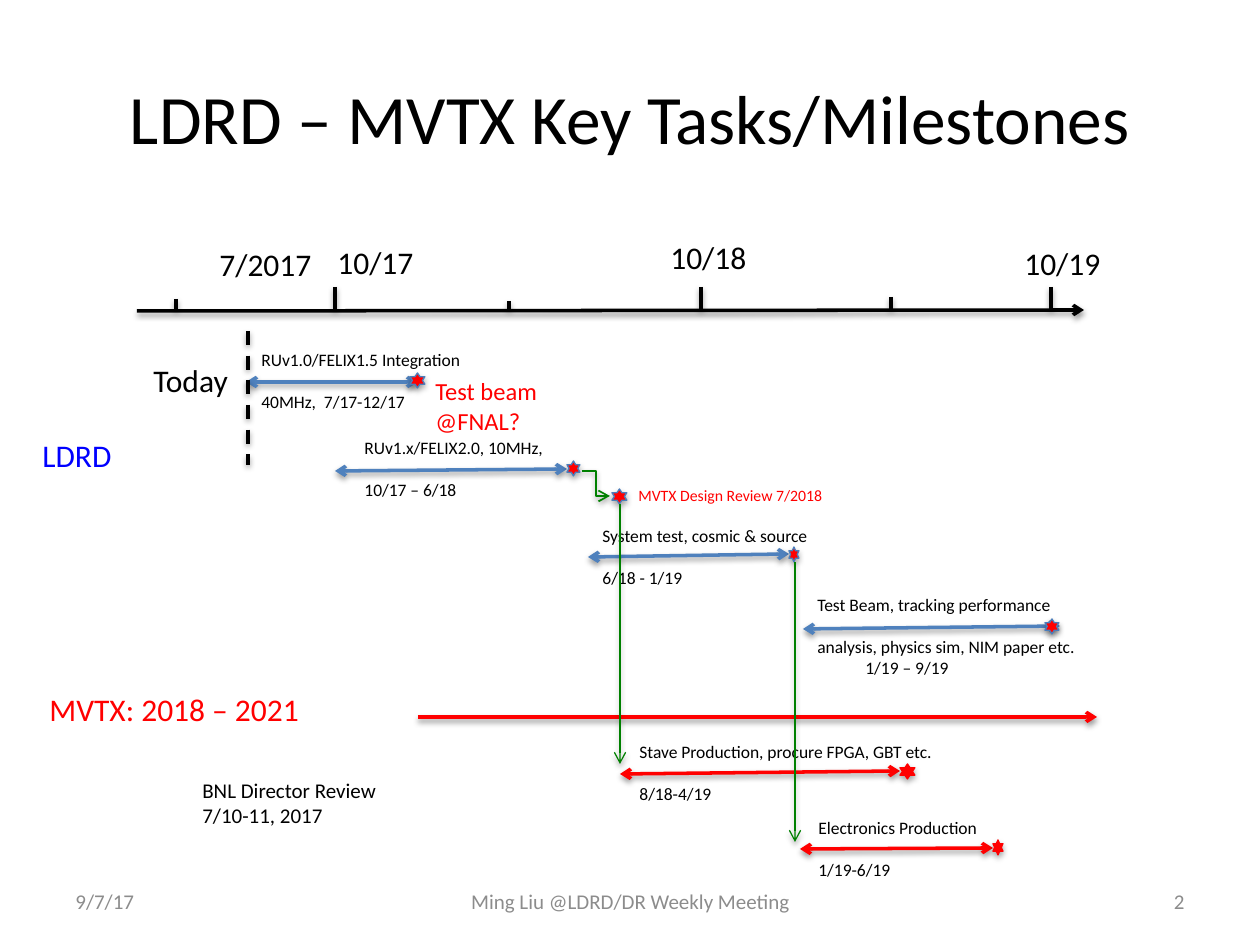
"""Build the LDRD – MVTX key tasks and milestones timeline slide."""
from lxml.etree import SubElement
from pptx import Presentation
from pptx.dml.color import RGBColor
from pptx.enum.dml import MSO_LINE
from pptx.enum.shapes import MSO_CONNECTOR as Connector, MSO_SHAPE as Shape
from pptx.enum.text import MSO_ANCHOR as Anchor, PP_ALIGN as Align
from pptx.oxml.ns import qn
from pptx.util import Emu, Pt

EMU_PER_PX = 914400 / 126
BLACK, RED, GREEN, GRAY = "000000", "FF0000", "008000", "8C8C8C"
BLUE, STAR_EDGE, LABEL_BLUE = "4F81BD", "4B7EBC", "0000FF"
STAR_SIZE = 15
AXIS_BOTTOM = 309

TASKS = [
    (["RUv1.0/FELIX1.5 Integration", "40MHz,  7/17-12/17"],
     (249, 343, 278), (246, 382, 418, 382), (410, 373, 15), BLUE),
    (["RUv1.x/FELIX2.0, 10MHz,", "10/17 – 6/18"],
     (352, 431, 272), (335, 471, 567, 469), (567, 461, 13), BLUE),
    (["System test, cosmic & source", "6/18 - 1/19"],
     (590, 519, 234), (588, 557, 789, 554), (789, 547, 10), BLUE),
    (["Test Beam, tracking performance", "analysis, physics sim, NIM paper etc.", "1/19 – 9/19"],
     (805, 588, 302), (803, 629, 1060, 626), (1045, 619, 14), BLUE),
    (["Stave Production, procure FPGA, GBT etc.", "8/18-4/19"],
     (627, 735, 324), (620, 774, 900, 771), (900, 764, 15), RED),
    (["Electronics Production", "1/19-6/19"],
     (806, 811, 218), (800, 849, 993, 848), (993, 840, 10), RED),
]
TICKS = [(176, 299), (335, 287), (509, 301), (701, 287), (891, 297), (1051, 287)]
DATES = [("7/2017", 207, 239, 118), ("10/17", 325, 237, 102),
         ("10/18", 658, 232, 102), ("10/19", 1012, 238, 102)]
LABELS = [
    (["LDRD"], (30, 430, 96, 50), 18, LABEL_BLUE),
    (["MVTX: 2018 – 2021"], (37, 684, 277, 50), 18, RED),
    (["Today"], (141, 355, 105, 50), 18, BLACK),
    (["BNL Director Review", "7/10-11, 2017"], (190, 771, 202, 63), 12, BLACK),
    (["Test beam", "@FNAL?"], (423, 370, 130, 72), 14, RED),
    (["MVTX Design Review 7/2018"], (626, 480, 212, 32), 9, RED),
]
FOOTERS = [("9/7/17", 63, 294, Align.LEFT),
           ("Ming Liu @LDRD/DR Weekly Meeting", 431, 399, Align.CENTER),
           ("2", 903, 294, Align.RIGHT)]


def px(length):
    """Turn pixels into EMU."""
    return Emu(round(length * EMU_PER_PX))


def color(value):
    """Turn a hex string into a colour."""
    return RGBColor.from_string(value)


def add_text(slide, lines, box, size, fill=BLACK, align=None):
    """Add a text box; aligned boxes wrap and are centred vertically."""
    frame = slide.shapes.add_textbox(*map(px, box)).text_frame
    frame.word_wrap = align is not None
    if align is not None:
        frame.vertical_anchor = Anchor.MIDDLE
    frame.text = "\n".join(lines)
    for paragraph in frame.paragraphs:
        paragraph.alignment = align
        paragraph.font.name = "Calibri"
        paragraph.font.size = Pt(size)
        paragraph.font.color.rgb = color(fill)
    return frame


def add_line(slide, ends, stroke=BLACK, width=2, head=False, tail=False,
             kind=Connector.STRAIGHT, dashed=False):
    """Add a connector with optional arrowheads, keeping the theme shadow."""
    connector = slide.shapes.add_connector(kind, *map(px, ends))
    line = connector.line
    line.color.rgb = color(stroke)
    line.width = Pt(width)
    if dashed:
        line.dash_style = MSO_LINE.DASH
    for tag, wanted in (("a:headEnd", head), ("a:tailEnd", tail)):
        if wanted:
            SubElement(line._get_or_add_ln(), qn(tag)).set("type", "arrow")


def add_star(slide, left, top, width, edge=STAR_EDGE):
    """Add a red milestone star, keeping the theme shadow."""
    star = slide.shapes.add_shape(Shape.STAR_6_POINT, *map(px, (left, top, width, STAR_SIZE)))
    star.fill.solid()
    star.fill.fore_color.rgb = color(RED)
    star.line.color.rgb = color(edge)
    star.line.width = Pt(0.75)


def add_task(slide, lines, label, span, star, stroke):
    """Add a task: its span arrow, end star, and text above and below."""
    add_line(slide, span, stroke, head=True, tail=True)
    add_star(slide, *star, edge=RED if stroke == RED else STAR_EDGE)
    frame = add_text(slide, lines, (*label, 77 + 20 * (len(lines) - 2)), 10)
    frame.paragraphs[1].space_before = Pt(12)
    for paragraph in frame.paragraphs[2:]:
        paragraph._p.get_or_add_pPr().set("marL", str(px(48)))


def add_timeline(slide):
    """Add the date axis with its ticks and dates."""
    add_line(slide, (137, 311, 1084, 310), tail=True)
    for x, top in TICKS:
        add_line(slide, (x, top, x, AXIS_BOTTOM))
    for date, left, top, width in DATES:
        add_text(slide, [date], (left, top, width, 50), 18)


def main():
    """Build and save the slide."""
    presentation = Presentation()
    presentation.slide_width, presentation.slide_height = px(1260), px(945)
    slide = presentation.slides.add_slide(presentation.slide_layouts[6])
    add_text(slide, ["LDRD – MVTX Key Tasks/Milestones"], (63, 38, 1134, 157), 39.6,
             align=Align.CENTER)
    add_timeline(slide)
    for task in TASKS:
        add_task(slide, *task)
    add_star(slide, 612, 489, STAR_SIZE)
    add_line(slide, (418, 717, 1097, 717), RED, tail=True)
    add_line(slide, (620, 504, 620, 764), GREEN, 0.75, tail=True)
    add_line(slide, (795, 562, 795, 842), GREEN, 0.75, tail=True)
    add_line(slide, (582, 471, 610, 496), GREEN, 1, tail=True, kind=Connector.ELBOW)
    add_line(slide, (248, 331, 248, 465), dashed=True)
    for label in LABELS:
        add_text(slide, *label)
    for text, left, width, align in FOOTERS:
        add_text(slide, [text], (left, 876, width, 50), 12, GRAY, align)
    presentation.save("out.pptx")


if __name__ == "__main__":
    main()
